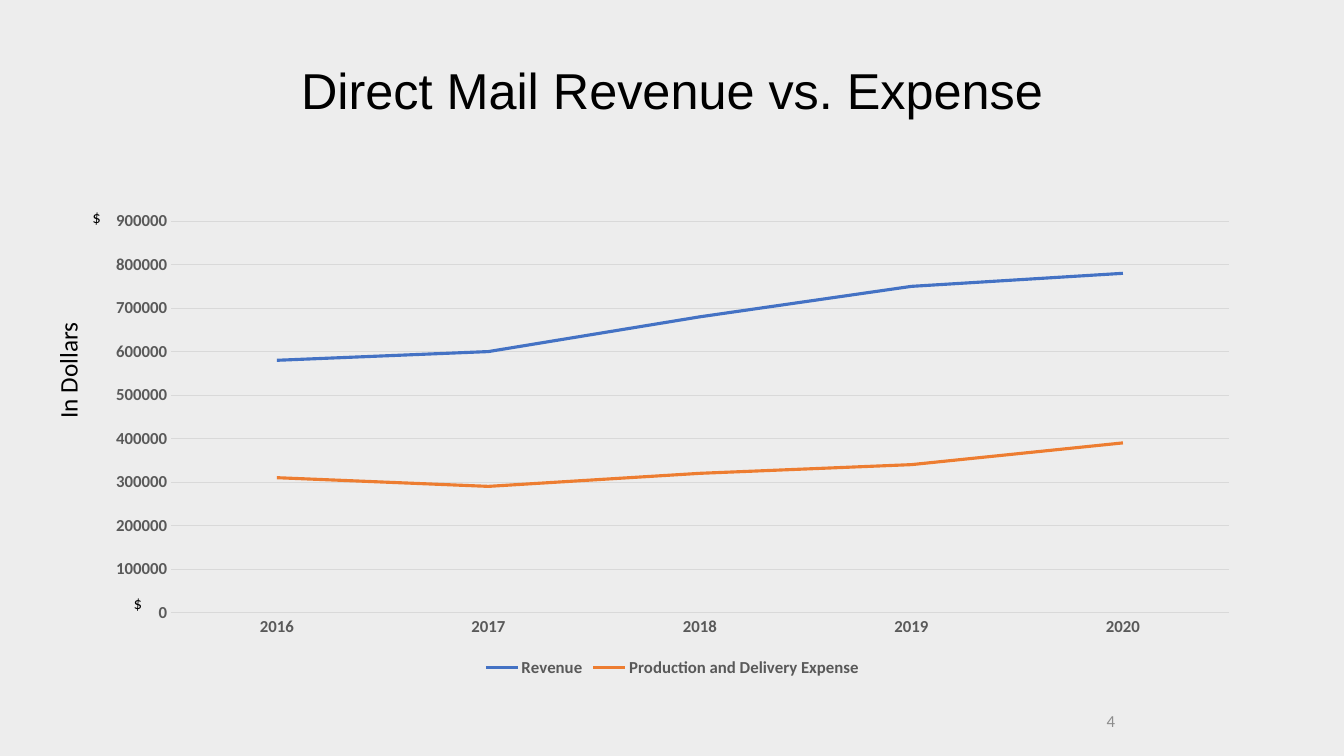
from pptx import Presentation
from pptx.chart.data import CategoryChartData
from pptx.dml.color import RGBColor
from pptx.enum.chart import XL_CHART_TYPE, XL_LEGEND_POSITION, XL_TICK_MARK
from pptx.enum.text import MSO_ANCHOR, PP_ALIGN
from pptx.util import Cm, Pt

LINE = XL_CHART_TYPE.LINE
BOTTOM = XL_LEGEND_POSITION.BOTTOM
NO_TICK = XL_TICK_MARK.NONE
MIDDLE = MSO_ANCHOR.MIDDLE
TOP = MSO_ANCHOR.TOP
LEFT, CENTER, RIGHT = PP_ALIGN.LEFT, PP_ALIGN.CENTER, PP_ALIGN.RIGHT

GRAY = "595959"
GRID = "D9D9D9"


def rgb(value):
    return RGBColor.from_string(value)


def style_font(font, size, color, name="Calibri", bold=False):
    font.size = Pt(size)
    font.name = name
    font.bold = bold
    font.color.rgb = rgb(color)


deck = Presentation()
deck.slide_width = Cm(33.87)
deck.slide_height = Cm(19.05)
slide = deck.slides.add_slide(deck.slide_layouts[5])
slide.background.fill.solid()
slide.background.fill.fore_color.rgb = rgb("EDEDED")

title = slide.shapes.title
title.left, title.top = Cm(5.51), Cm(0.76)
title.width, title.height = Cm(22.86), Cm(3.18)
title.text_frame.text = "Direct Mail Revenue vs. Expense"
title.text_frame.vertical_anchor = MIDDLE
heading = title.text_frame.paragraphs[0]
heading.alignment = CENTER
heading.line_spacing = 0.9
style_font(heading.runs[0].font, 36, "000000", "Arial")

finances = CategoryChartData()
finances.categories = ["2016", "2017", "2018", "2019", "2020"]
finances.add_series("Revenue", [580000, 600000, 680000, 750000, 780000])
finances.add_series("Production and Delivery Expense",
                    [310000, 290000, 320000, 340000, 390000])
chart = slide.shapes.add_chart(
    LINE, Cm(2.34), Cm(5.08), Cm(29.21), Cm(12.09), finances).chart
style_font(chart.font, 10, "000000")
chart.has_title = False
chart.has_legend = True
chart.legend.position = BOTTOM
chart.legend.include_in_layout = False
style_font(chart.legend.font, 12, GRAY, bold=True)

years, dollars = chart.category_axis, chart.value_axis
for axis in (years, dollars):
    axis.major_tick_mark = NO_TICK
    axis.minor_tick_mark = NO_TICK
    style_font(axis.tick_labels.font, 12, GRAY, bold=True)
dollars.minimum_scale = 0
dollars.maximum_scale = 900000
dollars.major_unit = 100000
dollars.format.line.fill.background()
for rule in (years.format.line, dollars.major_gridlines.format.line):
    rule.color.rgb = rgb(GRID)
    rule.width = Pt(0.75)

for series, color in zip(chart.plots[0].series, ("4472C4", "ED7D31")):
    series.smooth = False
    series.format.line.color.rgb = rgb(color)
    series.format.line.width = Pt(2.25)

labels = [
    ("4", 22.43, 17.65, 5.92, 1.02, 12, "8C8C8C", RIGHT, MIDDLE, 0, True),
    ("In Dollars", 0.23, 8.81, 2.95, 1.02, 18, "000000", LEFT, TOP, 270, False),
    ("$", 2.08, 5.08, 0.74, 0.76, 12, "000000", LEFT, TOP, 0, False),
    ("$", 3.12, 14.81, 0.74, 0.76, 12, "000000", LEFT, TOP, 0, False),
]
for text, left, top, width, height, size, color, align, anchor, turn, wrap in labels:
    label = slide.shapes.add_textbox(Cm(left), Cm(top), Cm(width), Cm(height))
    label.rotation = turn
    label.text_frame.text = text
    label.text_frame.word_wrap = wrap
    label.text_frame.vertical_anchor = anchor
    paragraph = label.text_frame.paragraphs[0]
    paragraph.alignment = align
    style_font(paragraph.runs[0].font, size, color)

deck.save("out.pptx")
